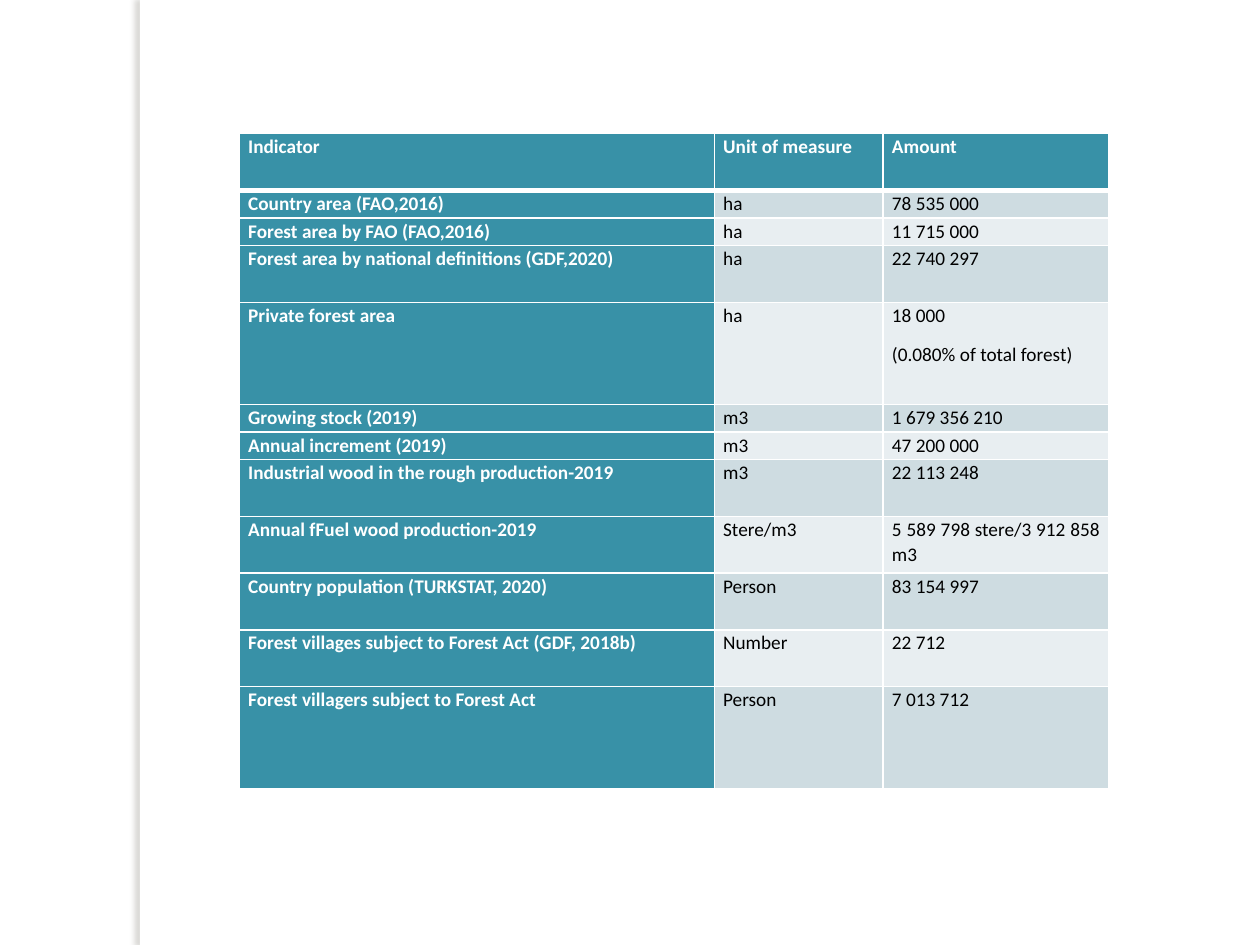
from lxml import etree
from pptx import Presentation
from pptx.dml.color import RGBColor
from pptx.enum.shapes import MSO_SHAPE
from pptx.enum.text import PP_ALIGN
from pptx.oxml import parse_xml
from pptx.oxml.ns import nsdecls, qn
from pptx.util import Inches, Pt

WHITE = RGBColor(0xFF, 0xFF, 0xFF)
BLACK = RGBColor(0x00, 0x00, 0x00)
TEAL = RGBColor(0x38, 0x91, 0xA7)
BANDS = [RGBColor(0xE8, 0xEE, 0xF1), RGBColor(0xCE, 0xDC, 0xE1)]
SHADE = RGBColor(0x73, 0x6F, 0x63)

COLUMN_WIDTHS = [3.77, 1.34, 1.79]
# Row height, then indicator, unit and amount; a line break starts a paragraph
ROWS = [
    (0.45, "Indicator", "Unit of measure", "Amount"),
    (0.22, "Country area (FAO,2016)", "ha", "78 535 000"),
    (0.22, "Forest area by FAO (FAO,2016)", "ha", "11 715 000"),
    (0.45, "Forest area by national definitions (GDF,2020)", "ha", "22 740 297"),
    (0.81, "Private forest area", "ha", "18 000\n(0.080% of total forest)"),
    (0.22, "Growing stock (2019)", "m3", "1 679 356 210"),
    (0.22, "Annual increment (2019)", "m3", "47 200 000"),
    (0.45, "Industrial wood in the rough production-2019", "m3", "22 113 248"),
    (0.45, "Annual fFuel wood production-2019", "Stere/m3",
     "5 589 798 stere/3 912 858 m3"),
    (0.45, "Country population (TURKSTAT, 2020)", "Person", "83 154 997"),
    (0.45, "Forest villages subject to Forest Act (GDF, 2018b)", "Number", "22 712"),
    (0.81, "Forest villagers subject to Forest Act", "Person", "7 013 712"),
]


def add_borders(cell, bottom_width):
    """Draw white 1 pt borders, with the bottom one at its own width."""
    properties = cell._tc.get_or_add_tcPr()
    for side in "LRTB":
        width = Pt(bottom_width if side == "B" else 1)
        line = etree.SubElement(properties, qn(f"a:ln{side}"), w=str(width))
        fill = etree.SubElement(line, qn("a:solidFill"))
        etree.SubElement(fill, qn("a:srgbClr"), val=str(WHITE))


prs = Presentation()
prs.slide_width = Inches(10)
prs.slide_height = Inches(7.5)
slide = prs.slides.add_slide(prs.slide_layouts[6])

# Side strip with a soft shadow to its left
strip = slide.shapes.add_shape(
    MSO_SHAPE.RECTANGLE, Inches(1.11), Inches(0), Inches(0.08), Inches(7.5))
strip.fill.solid()
strip.fill.fore_color.rgb = WHITE
strip.line.fill.background()
strip._element.spPr.append(parse_xml(
    f'<a:effectLst {nsdecls("a")}>'
    f'<a:outerShdw blurRad="{Pt(3)}" dist="{Pt(3)}" dir="10800000" algn="tl" rotWithShape="0">'
    f'<a:srgbClr val="{SHADE}"><a:alpha val="25000"/></a:srgbClr>'
    '</a:outerShdw></a:effectLst>'))

# Forest indicators
indicators = slide.shapes.add_table(
    len(ROWS), len(COLUMN_WIDTHS), Inches(1.9), Inches(1.06),
    Inches(sum(COLUMN_WIDTHS)), Inches(sum(row[0] for row in ROWS))).table
indicators.first_col = True
for column, width in zip(indicators.columns, COLUMN_WIDTHS):
    column.width = Inches(width)

for row_index, (height, *texts) in enumerate(ROWS):
    indicators.rows[row_index].height = Inches(height)
    for column_index, text in enumerate(texts):
        is_heading = row_index == 0 or column_index == 0
        cell = indicators.cell(row_index, column_index)
        add_borders(cell, 3 if row_index == 0 else 1)
        cell.fill.solid()
        cell.fill.fore_color.rgb = TEAL if is_heading else BANDS[row_index % 2]
        cell.margin_left = cell.margin_right = Inches(0.07)
        cell.margin_top = cell.margin_bottom = Inches(0)

        for line_index, line in enumerate(text.split("\n")):
            frame = cell.text_frame
            paragraph = frame.add_paragraph() if line_index else frame.paragraphs[0]
            paragraph.alignment = PP_ALIGN.JUSTIFY
            paragraph.line_spacing = 1.07
            paragraph.space_after = Pt(8)
            run = paragraph.add_run()
            run.text = line
            run.font.name = "Calibri"
            run.font.size = Pt(11)
            run.font.bold = is_heading
            run.font.color.rgb = WHITE if is_heading else BLACK

prs.save("out.pptx")
